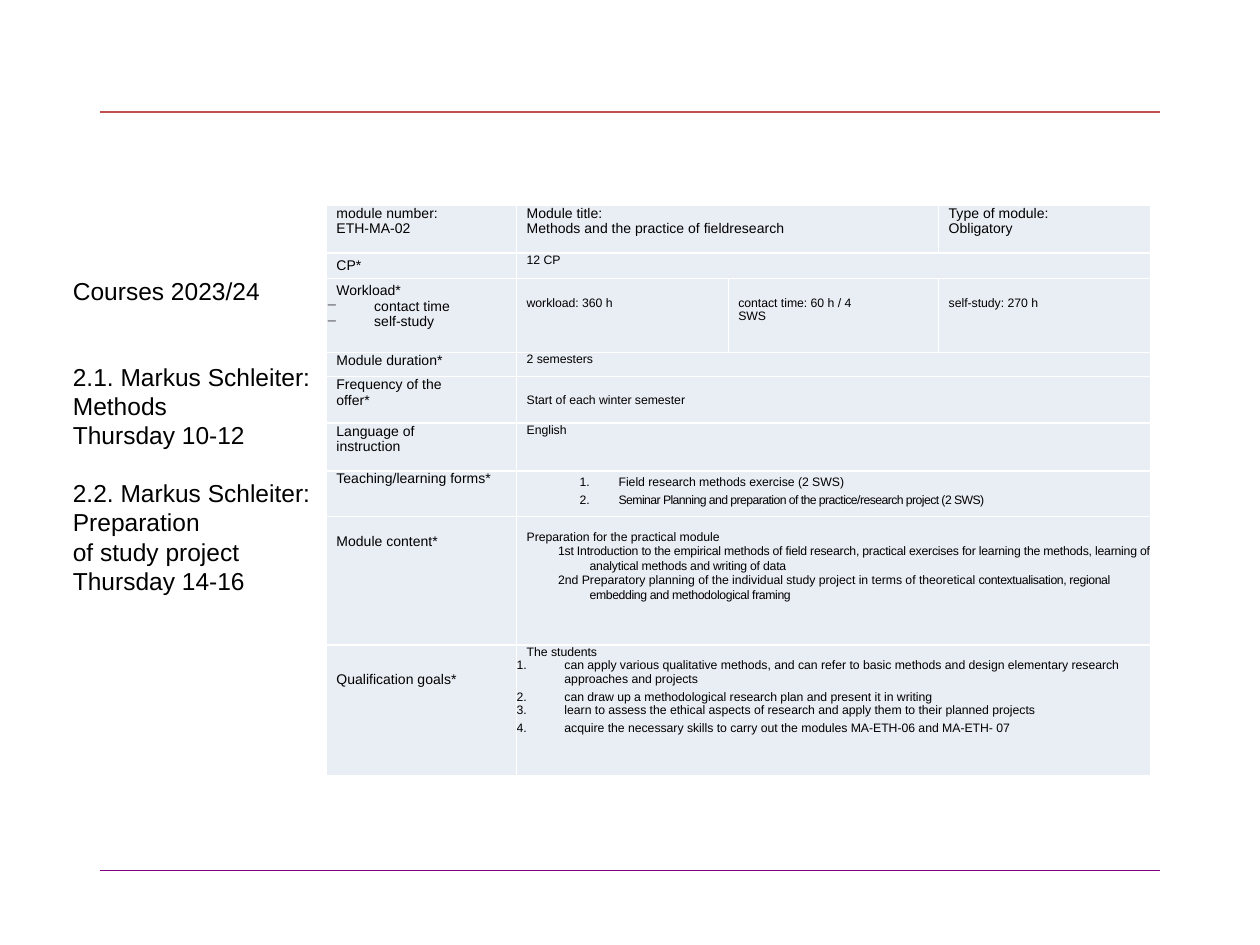
"""Build a course slide with a module description table."""
import pptx
import pptx.dml.color
import pptx.enum.shapes
import pptx.enum.text
import pptx.oxml.ns
import pptx.util
from lxml import etree

Inches, Pt = pptx.util.Inches, pptx.util.Pt
RGB = pptx.dml.color.RGBColor
BLACK = RGB(0, 0, 0)
WHITE = "FFFFFF"
PALE = RGB(0xE9, 0xED, 0xF4)
RED = RGB(0xC0, 0x50, 0x4D)
PURPLE = RGB(0x80, 0, 0x80)
FONT = "Arial"

RULES = [(0.89, RED), (6.91, PURPLE)]
COURSES = [
    ["Courses 2023/24"],
    ["2.1. Markus Schleiter:", "Methods", "Thursday 10-12"],
    ["2.2. Markus Schleiter:", "Preparation", "of study project", "Thursday 14-16"],
]
GAPS = [0, 32.2, 16.1]

COLS = [1.51, 1.68, 1.67, 1.68]
HEIGHTS = [0.38, 0.2, 0.59, 0.19, 0.37, 0.38, 0.36, 1.02, 1.04]
NUMBER = ("buAutoNum", {"type": "arabicPeriod"})
DASH = ("buChar", {"char": "−"})
STYLES = {
    "plain": (0.08, 0, None, None),
    "tall": (0.08, 0, Pt(11.4), None),
    "dash": (0.38, -0.38, None, DASH),
    "form": (0.81, -0.31, Pt(10.3), NUMBER),
    "part": (0.58, -0.25, 1.06, None),
    "goal": (0.38, -0.38, None, NUMBER),
    "wide": (0.38, -0.38, Pt(10.3), NUMBER),
}


def cell(*paras, span=1, size=7, top=0, right=0):
    return paras, span, size, top, right


def head(*paras, **more):
    return cell(*paras, size=8, **more)


ROWS = [
    [head("module number:", "ETH-MA-02"),
     head("Module title:", "Methods and the practice of fieldresearch", span=2),
     head("Type of module:", "Obligatory")],
    [head(("tall", "CP*")), cell("12 CP", span=3)],
    [head(("tall", "Workload*"), ("dash", "contact time"), ("dash", "self-study")),
     cell("workload: 360 h", top=0.14),
     cell("contact time: 60 h / 4 SWS", top=0.14, right=0.58),
     cell("self-study: 270 h", top=0.14)],
    [head("Module duration*"), cell("2 semesters", span=3)],
    [head("Frequency of the offer*", right=0.48),
     cell("Start of each winter semester", span=3, top=0.13)],
    [head("Language of instruction", right=0.48), cell("English", span=3)],
    [head("Teaching/learning forms*"),
     cell(("form", "Field research methods exercise (2 SWS)"),
          ("form", [("Seminar Planning and preparation of the practice/research "
                     "project (2 SWS)", -0.3)]), span=3)],
    [head("Module content*", top=0.14),
     cell("Preparation for the practical module",
          ("part", [("1st Introduction to the empirical methods of field research, "
                     "practical exercises for learning the methods, learning of "
                     "analytical methods and writing of data", -0.1)]),
          ("part", [("2nd Preparatory planning of the individual study project in "
                     "terms of theoretical ", 0),
                    ("contextualisation, regional embedding and methodological "
                     "framing", -0.2)]), span=3, top=0.11)],
    [head("Qualification goals*", top=0.21),
     cell("The students",
          ("goal", "can apply various qualitative methods, and can refer to basic "
                   "methods and design elementary research approaches and projects"),
          ("wide", "can draw up a methodological research plan and present it in "
                   "writing"),
          ("goal", "learn to assess the ethical aspects of research and apply them "
                   "to their planned projects"),
          ("wide", "acquire the necessary skills to carry out the modules MA-ETH-06 "
                   "and MA-ETH- 07"), span=3)],
]


def add(parent, tag, **attrs):
    return etree.SubElement(parent, pptx.oxml.ns.qn("a:" + tag), attrs)


def dress(para, size):
    para.font.name = FONT
    para.font.size = Pt(size)
    para.font.color.rgb = BLACK


def lines(frame, count):
    return [frame.paragraphs[0]] + [frame.add_paragraph() for _ in range(count - 1)]


def write(para, item, size):
    style, text = ("plain", item) if isinstance(item, str) else item
    left, first, pitch, mark = STYLES[style]
    props = para._p.get_or_add_pPr()
    props.set("marL", str(Inches(left)))
    props.set("indent", str(Inches(first)))
    if pitch:
        para.line_spacing = pitch
    if mark:
        add(props, mark[0], **mark[1])
    for words, space in [(text, 0)] if isinstance(text, str) else text:
        run = para.add_run()
        run.text = words
        if space:
            run._r.get_or_add_rPr().set("spc", str(round(space * 100)))
    dress(para, size)


def paint(box):
    box.margin_left = box.margin_right = box.margin_top = box.margin_bottom = 0
    props = box._tc.get_or_add_tcPr()
    for side in "LRTB":
        edge = add(props, "ln" + side, w=str(Pt(1)))
        add(add(edge, "solidFill"), "srgbClr", val=WHITE)
    box.fill.solid()
    box.fill.fore_color.rgb = PALE
    dress(box.text_frame.paragraphs[0], 7)


def rule(slide, top, color):
    kind = pptx.enum.shapes.MSO_CONNECTOR.STRAIGHT
    line = slide.shapes.add_connector(
        kind, Inches(0.79), Inches(top), Inches(9.21), Inches(top))
    line.line.color.rgb = color
    line.line.width = Pt(0.75)
    add(line._element.spPr, "effectLst")


def courses(slide):
    box = slide.shapes.add_textbox(
        Inches(0.48), Inches(2.14), Inches(3.32), Inches(2.69))
    frame = box.text_frame
    frame.word_wrap = True
    frame.auto_size = pptx.enum.text.MSO_AUTO_SIZE.SHAPE_TO_FIT_TEXT
    items = [(text, gap if num == 0 else 0)
             for group, gap in zip(COURSES, GAPS) for num, text in enumerate(group)]
    for para, (text, gap) in zip(lines(frame, len(items)), items):
        para.text = text
        if gap:
            para.space_before = Pt(gap)
        dress(para, 14)


def module(slide):
    table = slide.shapes.add_table(
        len(ROWS), len(COLS), Inches(2.59), Inches(1.63),
        Inches(sum(COLS)), Inches(sum(HEIGHTS))).table
    table.first_row = table.horz_banding = False
    for col, width in zip(table.columns, COLS):
        col.width = Inches(width)
    for row, height in zip(table.rows, HEIGHTS):
        row.height = Inches(height)
    for box in table.iter_cells():
        paint(box)
    for row, cells in enumerate(ROWS):
        col = 0
        for paras, span, size, top, right in cells:
            box = table.cell(row, col)
            if span > 1:
                box.merge(table.cell(row, col + span - 1))
            box.margin_top, box.margin_right = Inches(top), Inches(right)
            for para, item in zip(lines(box.text_frame, len(paras)), paras):
                write(para, item, size)
            col += span


def main():
    deck = pptx.Presentation()
    deck.slide_width, deck.slide_height = Inches(10), Inches(7.5)
    slide = deck.slides.add_slide(deck.slide_layouts[6])
    for top, color in RULES:
        rule(slide, top, color)
    courses(slide)
    module(slide)
    deck.save("out.pptx")


if __name__ == "__main__":
    main()
